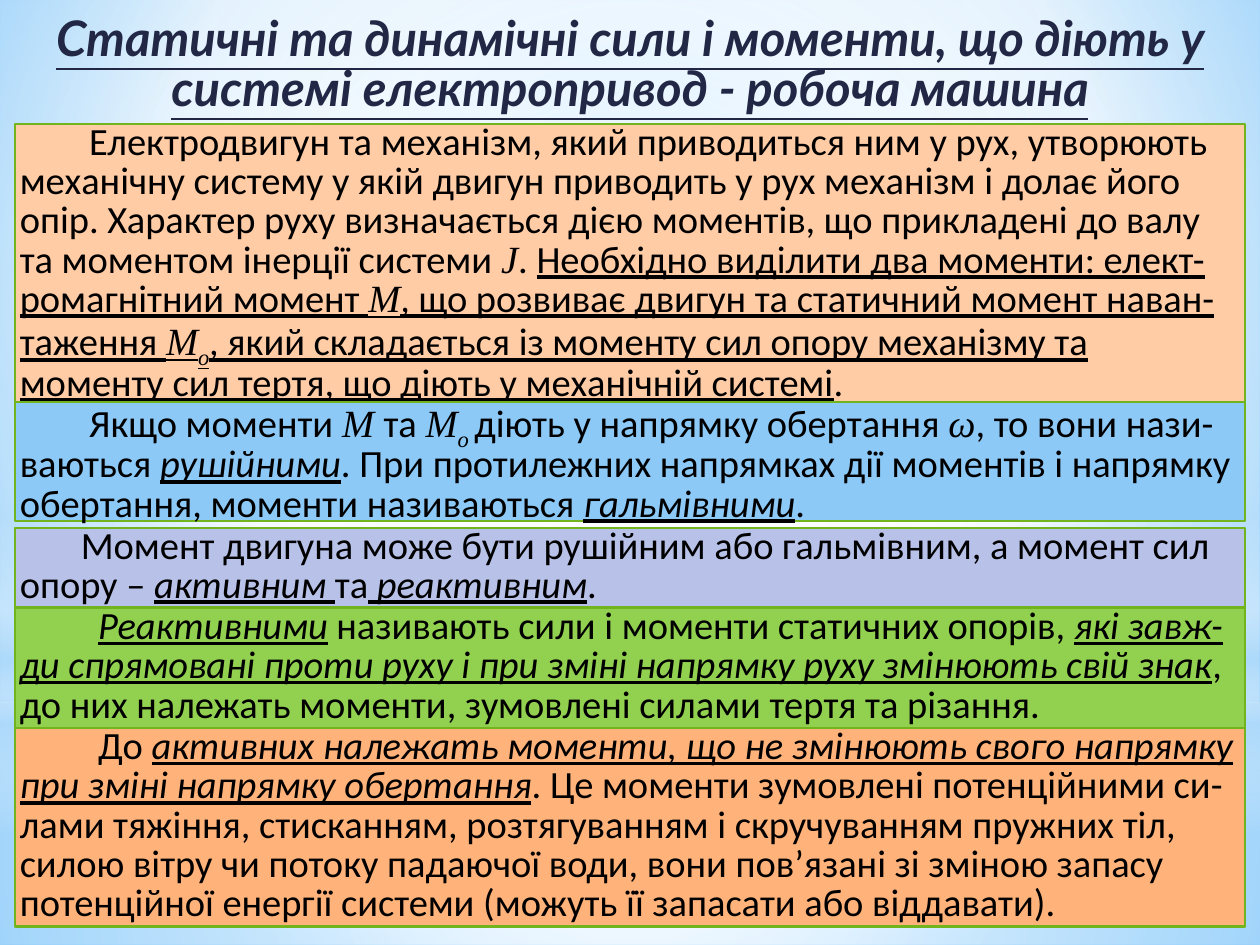
import pptx
import pptx.util
import pptx.oxml
import pptx.oxml.ns
from pptx.util import Cm, Pt
from pptx.dml.color import RGBColor
from pptx.enum.shapes import MSO_SHAPE
from pptx.enum.text import MSO_ANCHOR, PP_ALIGN

NAVY = RGBColor(0x21, 0x27, 0x45)
BLACK = RGBColor(0, 0, 0)
GREEN_LINE = RGBColor(0x72, 0xB4, 0x1D)
PEACH = RGBColor(0xFF, 0xCC, 0xA6)
SKY = RGBColor(0x8C, 0xC9, 0xF7)
LAVENDER = RGBColor(0xB8, 0xC2, 0xE9)
GREEN = RGBColor(0x92, 0xD0, 0x50)
ORANGE = RGBColor(0xFF, 0xB3, 0x7A)
WHITE = RGBColor(0xFF, 0xFF, 0xFF)
PALE_BLUE = RGBColor(0xB4, 0xDC, 0xFA)
LIGHT_BLUE = RGBColor(0x9E, 0xD5, 0xFF)
BLUE = RGBColor(0x5B, 0xB9, 0xFF)

CENTER = '<a:path path="circle"><a:fillToRect l="50000" t="50000" r="50000" b="50000"/></a:path>'
UPPER = '<a:path path="circle"><a:fillToRect l="20000" t="10000" r="20000" b="60000"/></a:path>'
DOWN = '<a:lin ang="5400000" scaled="0"/>'


def set_gradient(parent, stops, direction):
    gs = "".join(
        f'<a:gs pos="{pos * 1000}"><a:srgbClr val="{color}">'
        f'<a:alpha val="{alpha * 1000}"/></a:srgbClr></a:gs>'
        for pos, color, alpha in stops
    )
    xml = (f'<a:gradFill {pptx.oxml.ns.nsdecls("a")} rotWithShape="1">'
           f'<a:gsLst>{gs}</a:gsLst>{direction}</a:gradFill>')
    solid = parent.find(pptx.oxml.ns.qn("a:solidFill"))
    parent.replace(solid, pptx.oxml.parse_xml(xml))


def set_frame(tf, inset_x, inset_y):
    tf.word_wrap = True
    tf.vertical_anchor = MSO_ANCHOR.TOP
    tf.margin_left = tf.margin_right = Cm(inset_x)
    tf.margin_top = tf.margin_bottom = Cm(inset_y)
    tf.paragraphs[0].line_spacing = 0.85
    return tf.paragraphs[0]


prs = pptx.Presentation()
prs.slide_width, prs.slide_height = Cm(25.4), Cm(19.05)
slide = prs.slides.add_slide(prs.slide_layouts[6])

slide.background.fill.solid()
set_gradient(slide.element.find(".//" + pptx.oxml.ns.qn("p:bgPr")),
             [(0, LIGHT_BLUE, 100), (60, WHITE, 100), (100, BLUE, 100)], UPPER)

glows = [
    (MSO_SHAPE.RECTANGLE, 14.17, 4.88, CENTER,
     [(0, WHITE, 91), (37, WHITE, 76), (100, PALE_BLUE, 79)]),
    (MSO_SHAPE.RECTANGLE, 0, 14.17, CENTER,
     [(0, WHITE, 89), (48, WHITE, 62), (100, PALE_BLUE, 79)]),
    (MSO_SHAPE.RECTANGLE, 10.46, 6.35, DOWN,
     [(0, WHITE, 0), (29, WHITE, 30), (45, PALE_BLUE, 40),
      (55, WHITE, 26), (65, PALE_BLUE, 60), (100, WHITE, 0)]),
    (MSO_SHAPE.OVAL, 4.45, 14.17, CENTER, [(0, WHITE, 100), (56, WHITE, 0)]),
]
for kind, top, height, direction, stops in glows:
    s = slide.shapes.add_shape(kind, 0, Cm(top), prs.slide_width, Cm(height))
    s.shadow.inherit = False
    s.line.fill.background()
    s.fill.solid()
    set_gradient(s.element.spPr, stops, direction)

title = slide.shapes.add_textbox(Cm(0.3), Cm(0.2), Cm(24.8), Cm(2.29))
p = set_frame(title.text_frame, 0, 0.13)
p.alignment = PP_ALIGN.CENTER
p.font.name, p.font.size, p.font.color.rgb = "Lato", Pt(28), NAVY
p.font.bold = p.font.italic = p.font.underline = True
p.add_run().text = "Статичні та динамічні сили і моменти, що діють у системі електропривод - робоча машина"

# Style letters: u underline, i italic, m math symbol, s subscript
boxes = [
    (2.5, 5.61, PEACH, 1.4, [
        ("Електродвигун та механізм, який приводиться ним у рух, утворюють механічну систему "
         "у якій двигун приводить у рух механізм і долає його опір. Характер руху визначається "
         "дією моментів, що прикладені до валу та моментом інерції системи ", ""),
        ("J", "m"), (". ", ""),
        ("Необхідно виділити два моменти: елект-ромагнітний момент ", "u"),
        ("М", "mu"),
        (", що розвиває двигун та статичний момент наван-таження ", "u"),
        ("М", "mu"), ("о", "msu"),
        (", який складається із моменту сил опору механізму та моменту сил тертя, "
         "що діють у механічній системі", "u"), (".", "")]),
    (8.1, 2.41, SKY, 1.4, [
        ("Якщо моменти ", ""), ("М ", "m"), ("та ", ""), ("М", "m"), ("о ", "ms"),
        ("діють у напрямку обертання ", ""), ("ω", "m"), (", то вони нази-ваються ", ""),
        ("рушійними", "iu"),
        (". При протилежних напрямках дії моментів і напрямку обертання, "
         "моменти називаються ", ""),
        ("гальмівними", "iu"), (".", "")]),
    (10.64, 1.61, LAVENDER, 1.23, [
        ("Момент двигуна може бути рушійним або гальмівним, а момент сил опору – ", ""),
        ("активним ", "iu"), ("та", ""), (" реактивним", "iu"), (".", "")]),
    (12.26, 2.42, GREEN, 1.58, [
        ("Реактивними", "iu"), (" називають сили і моменти статичних опорів, ", ""),
        ("які завж-ди спрямовані проти руху і при зміні напрямку руху змінюють свій знак", "iu"),
        (", до них належать моменти, зумовлені силами тертя та різання.", "")]),
    (14.68, 4, ORANGE, 1.58, [
        ("До ", ""),
        ("активних належать моменти, що не змінюють свого напрямку "
         "при зміні напрямку обертання", "iu"),
        (". Це моменти зумовлені потенційними си-лами тяжіння, стисканням, розтягуванням "
         "і скручуванням пружних тіл, силою вітру чи потоку падаючої води, вони пов’язані "
         "зі зміною запасу потенційної енергії системи (можуть її запасати або віддавати).", "")]),
]
for top, height, color, indent, runs in boxes:
    s = slide.shapes.add_shape(MSO_SHAPE.RECTANGLE, Cm(0.3), Cm(top), Cm(24.8), Cm(height))
    s.shadow.inherit = False
    s.fill.solid()
    s.fill.fore_color.rgb = color
    s.line.color.rgb, s.line.width = GREEN_LINE, Pt(1.25)
    p = set_frame(s.text_frame, 0.1, 0)
    p.alignment = PP_ALIGN.LEFT
    p.font.size, p.font.color.rgb = Pt(22), BLACK
    pPr = p._p.get_or_add_pPr()
    pPr.set("marL", "0")
    pPr.set("indent", str(Cm(indent)))
    for text, style in runs:
        r = p.add_run()
        r.text = text
        r.font.name = "Times New Roman" if "m" in style else "Calibri"
        if "i" in style or "m" in style:
            r.font.italic = True
        if "u" in style:
            r.font.underline = True
        if "s" in style:
            r.font._element.set("baseline", "-25000")

prs.save("out.pptx")
